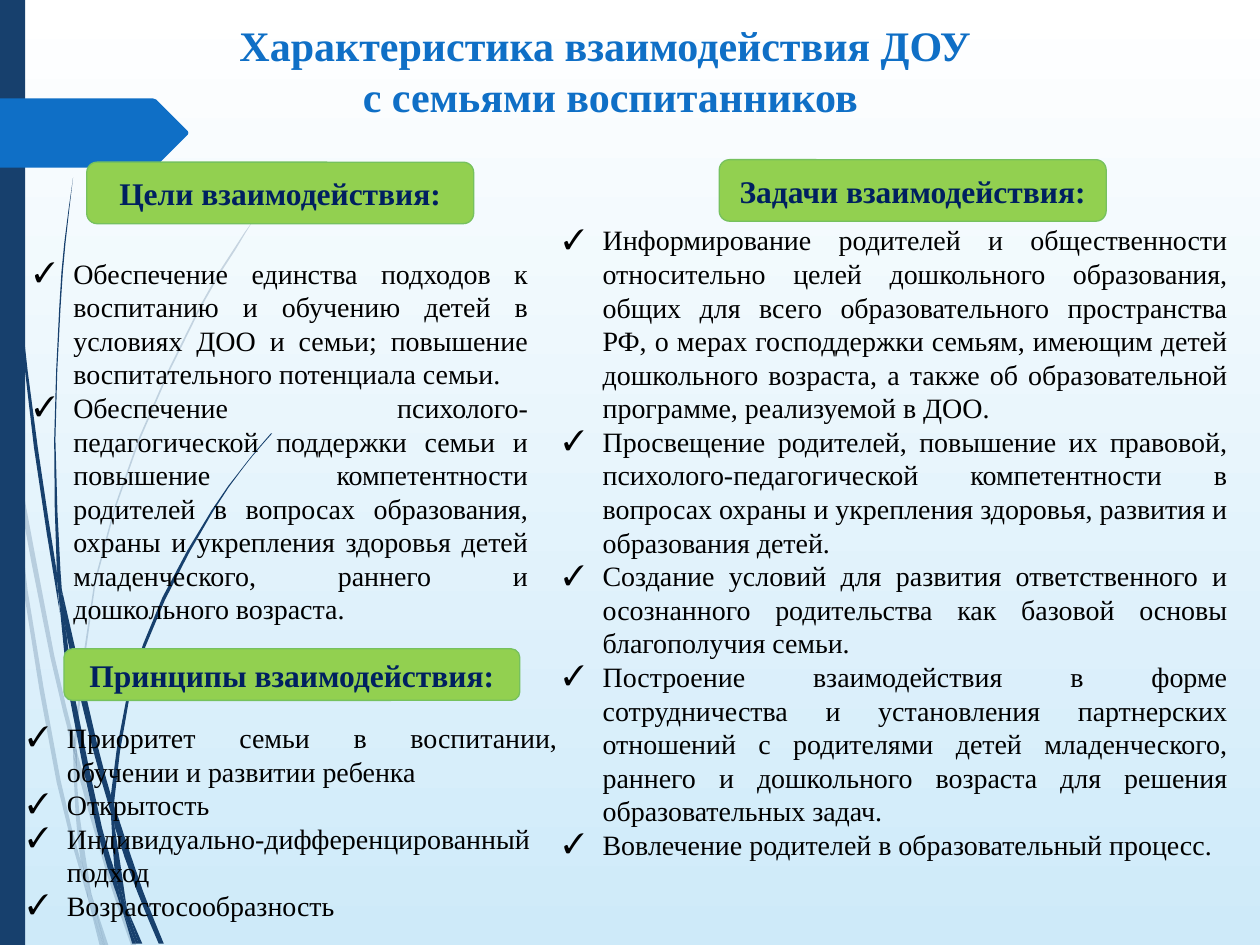
"""Build the slide on how a kindergarten works with pupils' families."""

from dataclasses import dataclass

from lxml.etree import SubElement
from pptx import Presentation
from pptx.dml.color import RGBColor
from pptx.enum.shapes import MSO_SHAPE
from pptx.enum.text import MSO_ANCHOR, MSO_AUTO_SIZE, PP_ALIGN
from pptx.oxml.ns import qn
from pptx.shapes.autoshape import Shape
from pptx.slide import Slide
from pptx.text.text import _Paragraph
from pptx.util import Cm, Pt

WHITE = RGBColor(0xFF, 0xFF, 0xFF)
SKY = RGBColor(0xCE, 0xEA, 0xF9)
DEEP_BLUE = RGBColor(0x17, 0x40, 0x6D)
BLUE = RGBColor(0x0F, 0x6F, 0xC6)
GREEN = RGBColor(0x92, 0xD0, 0x50)
GREEN_EDGE = RGBColor(0x76, 0xC1, 0x5E)
NAVY = RGBColor(0x00, 0x20, 0x60)
BLACK = RGBColor(0x00, 0x00, 0x00)
FONT = "Times New Roman"
BULLET_INDENT = Cm(0.79)
OUTLINE_UNIT = Cm(0.0254)
FINENESS = 10

Outline = list[tuple[float, float]]


@dataclass(frozen=True)
class Box:
    left: float
    top: float
    width: float
    height: float

    def lengths(self) -> tuple[Cm, Cm, Cm, Cm]:
        return Cm(self.left), Cm(self.top), Cm(self.width), Cm(self.height)


@dataclass(frozen=True)
class Section:
    heading: str
    heading_box: Box
    items_box: Box
    items: list[str]


TITLE = "Характеристика взаимодействия ДОУ \nс семьями воспитанников"
SECTIONS = [
    Section("Цели взаимодействия:", Box(1.75, 3.27, 7.8, 1.24), Box(0.44, 5.04, 10.46, 7.77), [
        "Обеспечение единства подходов к воспитанию и обучению детей в условиях ДОО и семьи; "
        "повышение воспитательного потенциала семьи.",
        "Обеспечение психолого-педагогической поддержки семьи и повышение компетентности родителей "
        "в вопросах образования, охраны и укрепления здоровья детей младенческого, раннего и "
        "дошкольного возраста.",
    ]),
    Section("Задачи взаимодействия:", Box(14.5, 3.22, 7.8, 1.24), Box(11.11, 4.37, 13.89, 13.26), [
        "Информирование родителей и общественности относительно целей дошкольного образования, "
        "общих для всего образовательного пространства РФ, о мерах господдержки семьям, имеющим "
        "детей дошкольного возраста, а также об образовательной программе, реализуемой в ДОО.",
        "Просвещение родителей, повышение их правовой, психолого-педагогической компетентности "
        "в вопросах охраны и укрепления здоровья, развития и образования детей.",
        "Создание условий для развития ответственного и осознанного родительства как базовой "
        "основы благополучия семьи.",
        "Построение взаимодействия в форме сотрудничества и установления партнерских отношений "
        "с родителями детей младенческого, раннего и дошкольного возраста для решения "
        "образовательных задач.",
        "Вовлечение родителей в образовательный процесс.",
    ]),
    Section("Принципы взаимодействия:", Box(1.29, 13.08, 9.19, 1.04), Box(0.31, 14.4, 11.18, 4.37), [
        "Приоритет семьи в воспитании, обучении и развитии ребенка",
        "Открытость",
        "Индивидуально-дифференцированный подход",
        "Возрастосообразность",
    ]),
]

PALE_BLADES: list[Outline] = [
    [(8, 350), (6, 322), (0, 282), (0, 299), (7, 344)],
    [(40, 522), (59, 599), (59, 586), (43, 520), (10, 345), (12, 376)],
    [(64, 607), (61, 596), (61, 610), (85, 694), (104, 750), (108, 750), (88, 692)],
    [(83, 750), (86, 750), (73, 711)],
    [(64, 683), (48, 619), (22, 469), (12, 376), (8, 350), (19, 470), (45, 621), (64, 693), (70, 714),
     (69, 707)],
    [(58, 599), (60, 646), (64, 683), (67, 692), (73, 711), (72, 706), (63, 646), (61, 610), (61, 608)],
    [(61, 584), (76, 462), (111, 349), (159, 245), (187, 198), (201, 175), (217, 154), (217, 153),
     (201, 175), (186, 197), (158, 244), (110, 348), (75, 461), (59, 584), (59, 586), (61, 596)],
    [(70, 714), (79, 750), (82, 750)],
    [(61, 608), (61, 610), (61, 596), (59, 586), (58, 599)],
    [(67, 692), (65, 683), (69, 707), (70, 714), (82, 750), (83, 750), (73, 711)],
]
DARK_BLADES: list[Outline] = [
    [(5, 110), (14, 233), (27, 355), (46, 477), (47, 481), (45, 457), (45, 453), (30, 355), (15, 232),
     (6, 109), (4, 48), (3, 0), (2, 0), (3, 48)],
    [(73, 592), (88, 645), (88, 633), (88, 631), (77, 590), (50, 472), (53, 505)],
    [(94, 649), (91, 641), (91, 656), (109, 708), (126, 749), (130, 749), (113, 706)],
    [(91, 691), (81, 657), (60, 556), (53, 505), (47, 477), (56, 557), (77, 659), (92, 708), (97, 722),
     (96, 717)],
    [(50, 472), (48, 453), (44, 349), (48, 245), (52, 193), (58, 141), (51, 193), (47, 245), (43, 349),
     (45, 449), (49, 472)],
    [(110, 749), (113, 749), (100, 719)],
    [(47, 477), (53, 505), (50, 472), (49, 472), (45, 449), (45, 453)],
    [(91, 633), (103, 552), (131, 476), (169, 406), (191, 374), (203, 359), (216, 344), (215, 344),
     (203, 358), (191, 373), (168, 405), (129, 474), (101, 551), (88, 631), (91, 641)],
    [(97, 722), (105, 749), (108, 749)],
    [(88, 645), (91, 691), (96, 706), (100, 719), (100, 716), (91, 656), (90, 651)],
    [(88, 645), (90, 651), (91, 656), (91, 641), (88, 631), (88, 633)],
    [(96, 706), (91, 691), (96, 717), (97, 722), (108, 749), (110, 749), (100, 719)],
]
ARROW: Outline = [(0, 78), (121, 78), (124, 79), (149, 104), (149.5, 105.5), (149, 107), (124, 132),
                  (121, 133), (0, 133)]


def smooth(outline: Outline) -> Outline:
    nodes = [complex(*point) for point in outline]
    curve = []
    for i, start in enumerate(nodes):
        before, end, after = (nodes[(i + step) % len(nodes)] for step in (-1, 1, 2))
        turn_in = (start - before).conjugate() * (end - start)
        turn_out = (end - start).conjugate() * (after - end)
        before = before if turn_in.real > 0.8 * abs(turn_in) else 2 * start - end
        after = after if turn_out.real > 0.8 * abs(turn_out) else 2 * end - start
        curve += [start, (9 * (start + end) - before - after) / 16]
    return [(node.real, node.imag) for node in curve]


def paint(shape: Shape, color: RGBColor) -> None:
    shape.shadow.inherit = False
    shape.fill.solid()
    shape.fill.fore_color.rgb = color
    shape.line.fill.background()


def draw_outline(slide: Slide, outline: Outline, color: RGBColor, opacity: int = 100) -> None:
    points = [(round(x * FINENESS), round(y * FINENESS)) for x, y in outline]
    builder = slide.shapes.build_freeform(*points[0], scale=OUTLINE_UNIT / FINENESS)
    builder.add_line_segments(points[1:])
    figure = builder.convert_to_shape()
    paint(figure, color)
    if opacity < 100:
        rgb = figure._element.spPr.find(f"{qn('a:solidFill')}/{qn('a:srgbClr')}")
        SubElement(rgb, qn("a:alpha"), val=str(opacity * 1000))


def style(paragraph: _Paragraph, size: int, color: RGBColor, align: PP_ALIGN, bold: bool) -> None:
    paragraph.alignment = align
    font = paragraph.font
    font.name, font.size, font.bold = FONT, Pt(size), bold
    font.color.rgb = color


def write_title(slide: Slide) -> None:
    title = slide.shapes.title
    title.left, title.top, title.width, title.height = Box(2.31, 0.27, 19.99, 2.31).lengths()
    frame = title.text_frame
    frame.text = TITLE
    frame.vertical_anchor = MSO_ANCHOR.TOP
    frame.auto_size = MSO_AUTO_SIZE.SHAPE_TO_FIT_TEXT
    for paragraph in frame.paragraphs:
        style(paragraph, 24, BLUE, PP_ALIGN.CENTER, True)


def draw_section(slide: Slide, section: Section) -> None:
    heading = slide.shapes.add_shape(MSO_SHAPE.ROUNDED_RECTANGLE, *section.heading_box.lengths())
    paint(heading, GREEN)
    heading.line.color.rgb = GREEN_EDGE
    heading.line.width = Pt(0.75)
    heading.text_frame.text = section.heading
    style(heading.text_frame.paragraphs[0], 18, NAVY, PP_ALIGN.CENTER, True)
    frame = slide.shapes.add_textbox(*section.items_box.lengths()).text_frame
    frame.word_wrap = True
    frame.auto_size = MSO_AUTO_SIZE.SHAPE_TO_FIT_TEXT
    frame.text = "\n".join(section.items)
    for paragraph in frame.paragraphs:
        properties = paragraph._p.get_or_add_pPr()
        properties.set("marL", str(BULLET_INDENT))
        properties.set("indent", str(-BULLET_INDENT))
        SubElement(properties, qn("a:buFont"), typeface=FONT)
        SubElement(properties, qn("a:buChar"), char="✓")
        style(paragraph, 16, BLACK, PP_ALIGN.JUSTIFY, False)


deck = Presentation()
deck.slide_width, deck.slide_height = Cm(25.4), Cm(19.05)
page = deck.slides.add_slide(deck.slide_layouts[5])
backdrop = page.background.fill
backdrop.gradient()
backdrop.gradient_angle = 270
for stop, shade in zip(backdrop.gradient_stops, (WHITE, SKY)):
    stop.color.rgb = shade
for blades, density in ((PALE_BLADES, 20), (DARK_BLADES, 100)):
    for blade in blades:
        draw_outline(page, smooth(blade), DEEP_BLUE, density)
paint(page.shapes.add_shape(MSO_SHAPE.RECTANGLE, *Box(0, 0, 0.51, 19.05).lengths()), DEEP_BLUE)
draw_outline(page, ARROW, BLUE)
write_title(page)
for topic in SECTIONS:
    draw_section(page, topic)
deck.save("out.pptx")
